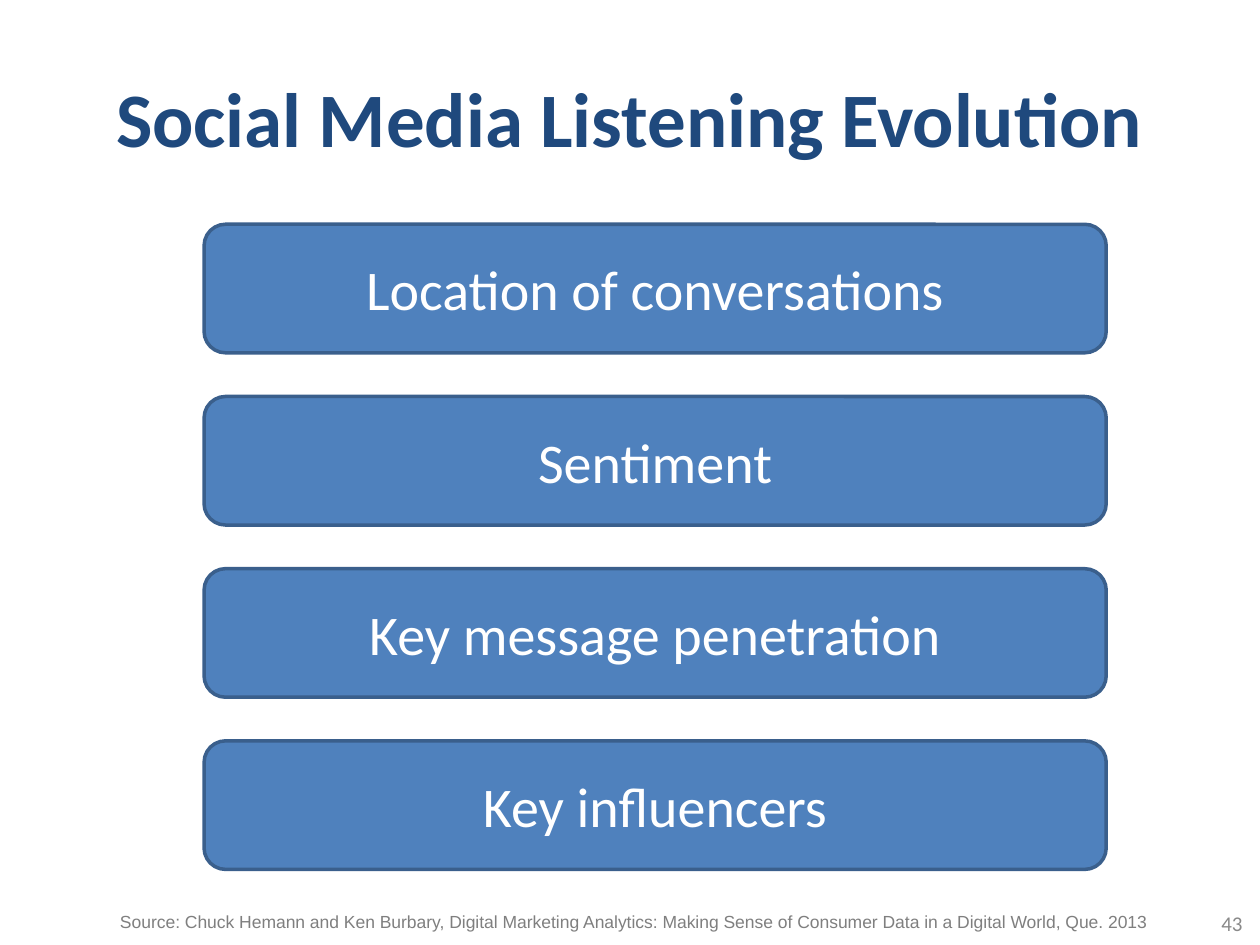
from pptx import Presentation
from pptx.dml.color import RGBColor
from pptx.enum.shapes import MSO_SHAPE
from pptx.enum.text import MSO_ANCHOR, PP_ALIGN
from pptx.util import Inches, Pt

ROUNDED = MSO_SHAPE.ROUNDED_RECTANGLE
TOP, MIDDLE = MSO_ANCHOR.TOP, MSO_ANCHOR.MIDDLE
CENTER, RIGHT = PP_ALIGN.CENTER, PP_ALIGN.RIGHT
TITLE_ONLY = 5

TOPICS = ["Location of conversations", "Sentiment",
          "Key message penetration", "Key influencers"]
SOURCE = ("Source: Chuck Hemann and Ken Burbary, Digital Marketing Analytics: "
          "Making Sense of Consumer Data in a Digital World, Que. 2013")

# Bar column, in inches
BAR_LEFT, BAR_TOP, BAR_WIDTH, BAR_HEIGHT = 1.62, 1.78, 7.16, 1.02
LAST_BAR_TOP = 5.88
BAR_STEP = (LAST_BAR_TOP - BAR_TOP) / (len(TOPICS) - 1)


def rgb(value):
    return RGBColor.from_string(value)


class Deck:
    """Slide style and the slide being built."""
    heading, bar_fill, bar_line = "1F497D", "4F81BD", "3A5F8C"
    white, number_grey, source_grey = "FFFFFF", "898989", "7F7F7F"

    def __init__(self, width, height):
        self.prs = Presentation()
        self.prs.slide_width, self.prs.slide_height = Inches(width), Inches(height)
        self.slide = self.prs.slides.add_slide(self.prs.slide_layouts[TITLE_ONLY])

    def set_text(self, sp, text, size, color, align=CENTER, anchor=MIDDLE,
                 font="Calibri", bold=False):
        tf = sp.text_frame
        tf.word_wrap = True
        tf.vertical_anchor = anchor
        p = tf.paragraphs[0]
        p.text, p.alignment = text, align
        p.font.name, p.font.size, p.font.bold = font, Pt(size), bold
        p.font.color.rgb = rgb(color)

    def title(self, text, *box):
        sp = self.slide.shapes.title
        sp.left, sp.top, sp.width, sp.height = map(Inches, box)
        self.set_text(sp, text, 44, self.heading, bold=True)

    def bar(self, text, *box):
        sp = self.slide.shapes.add_shape(ROUNDED, *map(Inches, box))
        sp.shadow.inherit = False
        sp.fill.solid()
        sp.fill.fore_color.rgb = rgb(self.bar_fill)
        sp.line.color.rgb = rgb(self.bar_line)
        sp.line.width = Pt(2)
        self.set_text(sp, text, 32, self.white)

    def label(self, text, *box, **style):
        sp = self.slide.shapes.add_textbox(*map(Inches, box))
        self.set_text(sp, text, **style)


def main():
    deck = Deck(10, 7.5)
    deck.title("Social Media Listening Evolution", 0.5, 0.3, 9, 1.25)
    deck.label("43", 7.63, 7.13, 2.33, 0.4,
               size=12, color=deck.number_grey, align=RIGHT)
    for row, topic in enumerate(TOPICS):
        deck.bar(topic, BAR_LEFT, BAR_TOP + row * BAR_STEP, BAR_WIDTH, BAR_HEIGHT)
    deck.label(SOURCE, 0.49, 7.18, 9.07, 0.27,
               size=10, color=deck.source_grey, anchor=TOP, font="Arial")
    deck.prs.save("out.pptx")


if __name__ == "__main__":
    main()
